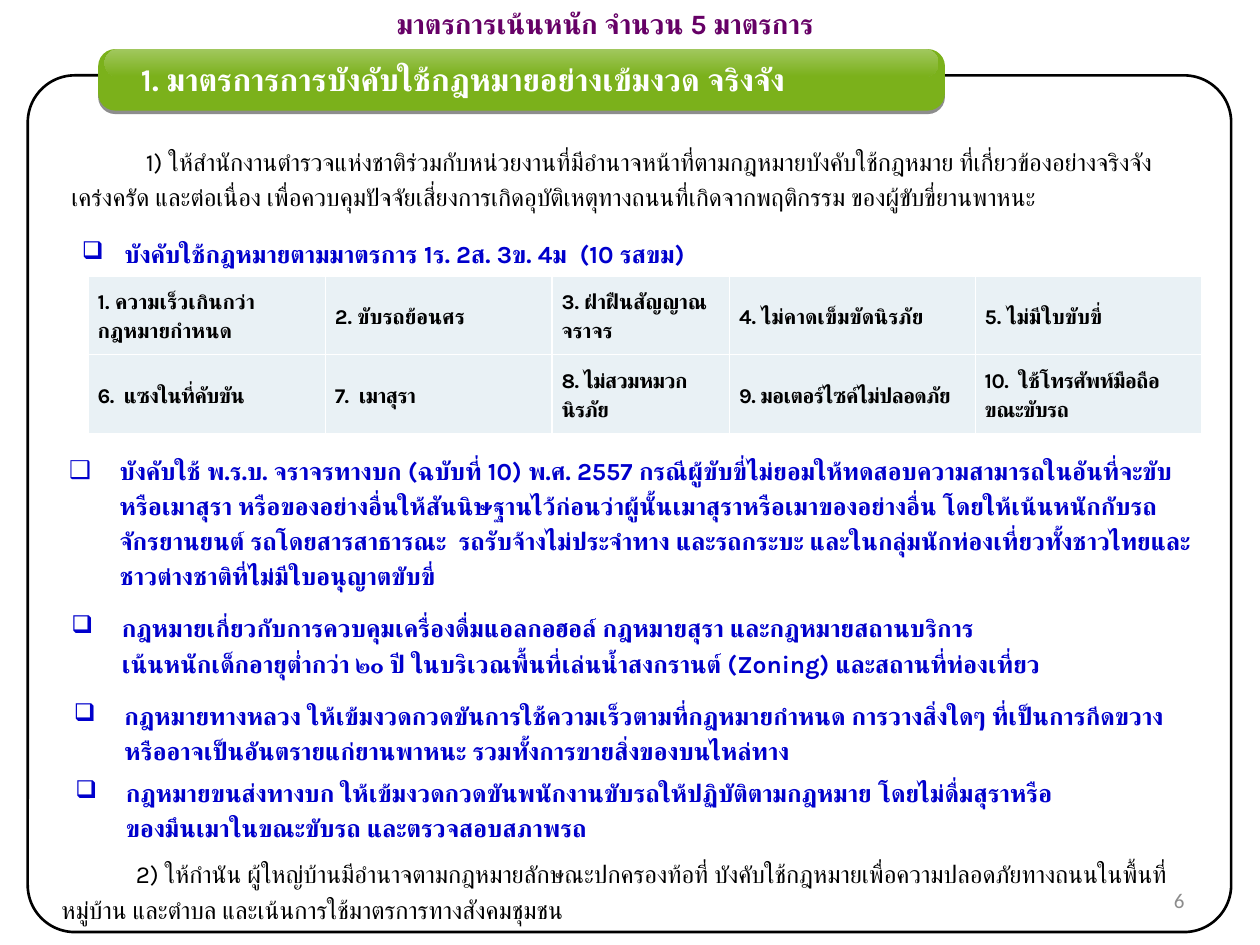
from copy import deepcopy

from lxml.etree import SubElement
from pptx import Presentation
from pptx.dml.color import RGBColor
from pptx.enum.lang import MSO_LANGUAGE_ID
from pptx.enum.shapes import MSO_SHAPE
from pptx.enum.text import MSO_ANCHOR, MSO_AUTO_SIZE, PP_ALIGN
from pptx.oxml.ns import qn
from pptx.util import Cm, Pt

COLORS = {
    "white": "FFFFFF", "black": "000000", "green": "7BB11B", "shadow": "1C1C1C",
    "cell": "E9F1F5", "blue": "0000CC", "purple": "660066", "gray": "8C8C8C",
}
HANGING = 1.02


def rgb(name):
    return RGBColor.from_string(COLORS[name])


def set_values(target, values):
    for name, value in values.items():
        setattr(target, name, value)


class SlideBuilder:
    font = "Karla"

    def __init__(self, slide):
        self.slide = slide
        self.shapes = slide.shapes

    def paragraph(self, frame, text, color, size=14, bold=False, spacing=1.2, indent=None,
                  bullet=False, align=PP_ALIGN.LEFT, font=None, tracking=None):
        paragraph = frame.paragraphs[0]
        paragraph.text = text
        set_values(paragraph, {"alignment": align, "line_spacing": spacing,
                               "space_before": Pt(0), "space_after": Pt(0)})
        properties = paragraph._p.get_or_add_pPr()
        margin, first_line = indent or (0, 0)
        properties.set("marL", str(Cm(margin)))
        properties.set("indent", str(Cm(first_line)))
        if bullet:
            SubElement(properties, qn("a:buChar"), char="❑")
        else:
            SubElement(properties, qn("a:buNone"))
        for run in paragraph.runs:
            set_values(run.font, {"size": Pt(size), "bold": bold, "name": font or self.font,
                                  "language_id": MSO_LANGUAGE_ID.THAI})
            run.font.color.rgb = rgb(color)
            run_properties = run._r.get_or_add_rPr()
            SubElement(run_properties, qn("a:cs"), typeface=font or self.font)
            if tracking:
                run_properties.set("spc", str(tracking))
        # Line breaks take the size of the text around them
        for line_break in paragraph._p.findall(qn("a:br")):
            line_break.append(deepcopy(run_properties))

    def text(self, box, text, color, placeholder=None, anchor=MSO_ANCHOR.TOP,
             auto_size=MSO_AUTO_SIZE.SHAPE_TO_FIT_TEXT, **style):
        lengths = [Cm(value) for value in box]
        shape = placeholder or self.shapes.add_textbox(*lengths)
        set_values(shape, dict(zip(("left", "top", "width", "height"), lengths)))
        set_values(shape.text_frame, {"word_wrap": True, "vertical_anchor": anchor,
                                      "auto_size": auto_size})
        self.paragraph(shape.text_frame, text, color, **style)

    def rounded(self, box, radius, fill=None, line=None):
        shape = self.shapes.add_shape(MSO_SHAPE.ROUNDED_RECTANGLE,
                                      *[Cm(value) for value in box])
        shape.adjustments[0] = radius
        shape.shadow.inherit = False
        if fill:
            shape.fill.solid()
            shape.fill.fore_color.rgb = rgb(fill)
        if line:
            shape.line.color.rgb = rgb(line)
            shape.line.width = Pt(1.5)
        else:
            shape.line.fill.background()
        return shape

    def frame(self, box):
        outline = self.rounded(box, 0.055, "white", "black")
        self.shapes._spTree.insert(2, outline._element)  # behind the placeholders

    def banner(self, box, gloss_box):
        base = self.rounded(box, 0.279, "green")
        effects = base._element.spPr.find(qn("a:effectLst"))
        shadow = SubElement(effects, qn("a:outerShdw"), blurRad="0",
                            dist=str(Pt(2)), dir="5400000", rotWithShape="0")
        shade = SubElement(shadow, qn("a:srgbClr"), val=COLORS["shadow"])
        SubElement(shade, qn("a:alpha"), val="50000")

        gloss = self.rounded(gloss_box, 0.5)
        gloss.fill.gradient()
        gloss.fill.gradient_angle = 270
        for stop, color, position in zip(gloss.fill.gradient_stops,
                                         ("white", "green"), (0, 1)):
            stop.color.rgb = rgb(color)
            stop.position = position
        for tint in gloss._element.spPr.find(qn("a:gradFill")).iter(qn("a:srgbClr")):
            SubElement(tint, qn("a:alpha"), val="30000")
        self.shapes.add_group_shape([base, gloss])

    def table(self, box, widths, row_height, rows, trackings):
        table = self.shapes.add_table(len(rows), len(widths),
                                      *[Cm(value) for value in box]).table
        set_values(table, {"first_row": False, "horz_banding": False})
        for column, width in zip(table.columns, widths):
            column.width = Cm(width)
        for row, offenses, tracking in zip(table.rows, rows, trackings):
            row.height = Cm(row_height)
            for cell, offense in zip(row.cells, offenses):
                set_values(cell, {"vertical_anchor": MSO_ANCHOR.MIDDLE,
                                  "margin_left": Cm(0.19), "margin_right": Cm(0.19),
                                  "margin_top": 0, "margin_bottom": 0})
                self.paragraph(cell.text_frame, offense, "black", size=12, bold=True,
                               spacing=1.15, tracking=tracking)
                self.borders(cell)
                cell.fill.solid()
                cell.fill.fore_color.rgb = rgb("cell")

    def borders(self, cell):
        for side in ("lnL", "lnR", "lnT", "lnB"):
            edge = SubElement(cell._tc.get_or_add_tcPr(), qn(f"a:{side}"), w=str(Pt(1)))
            SubElement(SubElement(edge, qn("a:solidFill")), qn("a:srgbClr"),
                       val=COLORS["white"])


def main():
    deck = Presentation()
    deck.slide_width, deck.slide_height = Cm(25.4), Cm(19.05)
    page = SlideBuilder(deck.slides.add_slide(deck.slide_layouts[1]))
    title, body = page.shapes.title, page.slide.placeholders[1]

    # Frame, title and banner
    page.frame((0.56, 1.52, 24.26, 17.27))
    page.text((5.56, 0, 13.28, 0.94), "มาตรการเน้นหนัก จำนวน 5 มาตรการ", "purple",
              placeholder=title, size=16, bold=True, spacing=1, align=PP_ALIGN.CENTER)
    page.banner((1.98, 0.99, 17.07, 1.24), (2.11, 0.99, 16.81, 0.56))
    page.text((2.59, 1.09, 17.07, 1.02), "1. มาตรการการบังคับใช้กฎหมายอย่างเข้มงวด จริงจัง",
              "white", size=18, bold=True, spacing=1)

    # Numbered measures
    measures = [
        ((1.19, 2.39, 23.01, 2.34),
         "1) ให้สำนักงานตำรวจแห่งชาติร่วมกับหน่วยงานที่มีอำนาจหน้าที่ตามกฎหมายบังคับใช้กฎหมาย "
         "ที่เกี่ยวข้องอย่างจริงจัง เคร่งครัด และต่อเนื่อง "
         "เพื่อควบคุมปัจจัยเสี่ยงการเกิดอุบัติเหตุทางถนนที่เกิดจากพฤติกรรม ของผู้ขับขี่ยานพาหนะ"),
        ((0.99, 17.07, 23.01, 1.7),
         "2) ให้กำนัน ผู้ใหญ่บ้านมีอำนาจตามกฎหมายลักษณะปกครองท้อที่ "
         "บังคับใช้กฎหมายเพื่อความปลอดภัยทางถนนในพื้นที่หมู่บ้าน และตำบล "
         "และเน้นการใช้มาตรการทางสังคมชุมชน"),
    ]
    for box, measure in measures:
        page.text(box, measure, "black", anchor=MSO_ANCHOR.MIDDLE, indent=(0, 1.5))

    # Ten offenses
    page.table((1.78, 5.56, 22.45, 3.18), (4.78, 4.57, 3.58, 4.95, 4.57), 1.59, [
        ("1. ความเร็วเกินกว่ากฎหมายกำหนด", "2. ขับรถย้อนศร", "3. ฝ่าฝืนสัญญาณจราจร",
         "4. ไม่คาดเข็มขัดนิรภัย", "5. ไม่มีใบขับขี่"),
        ("6.  แซงในที่คับขัน", "7.  เมาสุรา", "8. ไม่สวมหมวกนิรภัย",
         "9. มอเตอร์ไซค์ไม่ปลอดภัย", "10.  ใช้โทรศัพท์มือถือ\nขณะขับรถ"),
    ], (None, -30))

    # Laws to enforce: box, left margin, hanging indent, text, placeholder
    laws = [
        ((1.4, 4.57, 20.83, 0.89), 0.86, 0.86,
         "บังคับใช้กฎหมายตามมาตรการ 1ร. 2ส. 3ข. 4ม  (10 รสขม)", None),
        ((0.89, 8.94, 23.62, 3.12), 1.27, HANGING,
         "บังคับใช้ พ.ร.บ. จราจรทางบก (ฉบับที่ 10) พ.ศ. 2557 "
         "กรณีผู้ขับขี่ไม่ยอมให้ทดสอบความสามารถในอันที่จะขับ "
         "หรือเมาสุรา หรือของอย่างอื่นให้สันนิษฐานไว้ก่อนว่าผู้นั้นเมาสุราหรือเมาของอย่างอื่น "
         "โดยให้เน้นหนักกับรถจักรยานยนต์ รถโดยสารสาธารณะ  รถรับจ้างไม่ประจำทาง และรถกระบะ "
         "และในกลุ่มนักท่องเที่ยวทั้งชาวไทยและชาวต่างชาติที่ไม่มีใบอนุญาตขับขี่", body),
        ((1.19, 12.12, 23.01, 1.63), HANGING, HANGING,
         "กฎหมายเกี่ยวกับการควบคุมเครื่องดื่มแอลกอฮอล์ กฎหมายสุรา และกฎหมายสถานบริการ \n"
         "เน้นหนักเด็กอายุต่ำกว่า ๒๐ ปี ในบริเวณพื้นที่เล่นน้ำสงกรานต์ (Zoning) "
         "และสถานที่ท่องเที่ยว", None),
        ((0.79, 13.89, 23.42, 1.63), 1.47, HANGING,
         "กฎหมายทางหลวง ให้เข้มงวดกวดขันการใช้ความเร็วตามที่กฎหมายกำหนด การวางสิ่งใดๆ "
         "ที่เป็นการกีดขวางหรืออาจเป็นอันตรายแก่ยานพาหนะ รวมทั้งการขายสิ่งของบนไหล่ทาง", None),
        ((0, 15.44, 22.23, 1.63), 2.29, HANGING,
         "กฎหมายขนส่งทางบก ให้เข้มงวดกวดขันพนักงานขับรถให้ปฏิบัติตามกฎหมาย "
         "โดยไม่ดื่มสุราหรือของมึนเมาในขณะขับรถ และตรวจสอบสภาพรถ", None),
    ]
    for box, margin, hanging, law, placeholder in laws:
        page.text(box, law, "blue", placeholder=placeholder, bold=True, bullet=True,
                  indent=(margin, -hanging))

    # Page number
    page.text((18.21, 17.63, 5.92, 1.02), "6", "gray", anchor=MSO_ANCHOR.MIDDLE, size=12,
              spacing=1, align=PP_ALIGN.RIGHT, font="Calibri", auto_size=MSO_AUTO_SIZE.NONE)

    deck.save("out.pptx")


if __name__ == "__main__":
    main()
